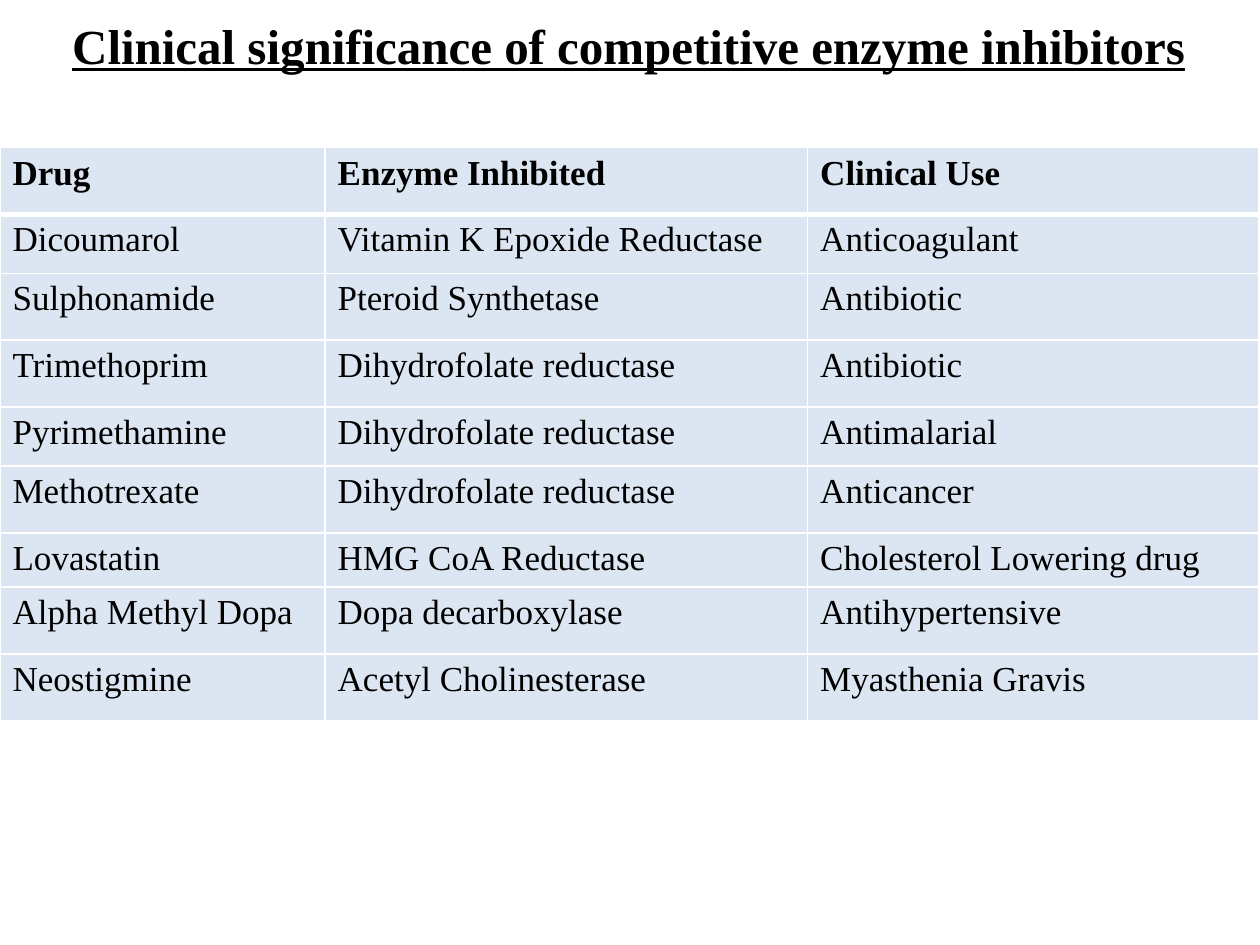
from lxml import etree
from pptx import Presentation
from pptx import util as u
from pptx.dml.color import RGBColor
from pptx.enum import text
from pptx.oxml.ns import qn

BLACK = RGBColor(0x00, 0x00, 0x00)
WHITE = RGBColor(0xFF, 0xFF, 0xFF)
PALE_BLUE = RGBColor(0xDC, 0xE6, 0xF2)

TITLE = "Clinical significance of competitive enzyme inhibitors"
DRUGS = [
    ("Drug", "Enzyme Inhibited", "Clinical Use"),
    ("Dicoumarol", "Vitamin K Epoxide Reductase", "Anticoagulant"),
    ("Sulphonamide", "Pteroid Synthetase", "Antibiotic"),
    ("Trimethoprim", "Dihydrofolate reductase", "Antibiotic"),
    ("Pyrimethamine", "Dihydrofolate reductase", "Antimalarial"),
    ("Methotrexate", "Dihydrofolate reductase", "Anticancer"),
    ("Lovastatin", "HMG CoA Reductase", "Cholesterol Lowering drug"),
    ("Alpha Methyl Dopa", "Dopa decarboxylase", "Antihypertensive"),
    ("Neostigmine", "Acetyl Cholinesterase", "Myasthenia Gravis"),
]
# Widths in grid columns, heights in grid rows
COL_WIDTHS = [25.8, 38.3, 35.8]
ROW_HEIGHTS = [5.3, 4.7, 5.3, 5.3, 4.7, 5.3, 4.3, 5.3, 5.3]


class SlideBuilder:
    """Holds the style and the current slide, on a grid of 100 x 75 units."""

    COLS, ROWS = 100, 75
    FONT = {"name": "Times New Roman"}

    def __init__(self, prs):
        self.col = prs.slide_width / self.COLS
        self.row = prs.slide_height / self.ROWS
        self.s = prs.slides.add_slide(prs.slide_layouts[5])

    def box(self, left, top, width, height):
        return (u.Emu(int(left * self.col)), u.Emu(int(top * self.row)),
                u.Emu(int(width * self.col)), u.Emu(int(height * self.row)))

    def add_words(self, tf, words, **font):
        p = tf.paragraphs[0]
        r = p.add_run()
        r.text = words
        for name, value in {**self.FONT, **font}.items():
            setattr(r.font, name, value)
        r.font.color.rgb = BLACK
        return p

    def title(self, words, *place):
        sp = self.s.shapes.title
        sp.left, sp.top, sp.width, sp.height = self.box(*place)
        tf = sp.text_frame
        tf.word_wrap = True
        tf.auto_size = text.MSO_AUTO_SIZE.NONE
        tf.vertical_anchor = text.MSO_ANCHOR.TOP
        p = self.add_words(tf, words, size=u.Pt(28), bold=True, underline=True)
        p.alignment = text.PP_ALIGN.CENTER

    def borders(self, cell, **widths):
        # Border lines come before the fill in the cell properties
        tc_pr = cell._tc.get_or_add_tcPr()
        for i, side in enumerate("LRTB"):
            ln = etree.Element(qn(f"a:ln{side}"), w=str(u.Pt(widths.get(side, 1))))
            fill = etree.SubElement(ln, qn("a:solidFill"))
            etree.SubElement(fill, qn("a:srgbClr"), val=str(WHITE))
            tc_pr.insert(i, ln)

    def table(self, rows, left, top, widths, heights):
        place = self.box(left, top, sum(widths), sum(heights))
        table = self.s.shapes.add_table(len(rows), len(widths), *place).table
        for column, width in zip(table.columns, widths):
            column.width = u.Emu(int(width * self.col))
        for row, height in zip(table.rows, heights):
            row.height = u.Emu(int(height * self.row))
        # A heavier rule separates the header from the body
        rules = {0: {"B": 3}, 1: {"T": 3}}
        for i, row in enumerate(rows):
            for j, words in enumerate(row):
                cell = table.cell(i, j)
                cell.fill.solid()
                cell.fill.fore_color.rgb = PALE_BLUE
                self.borders(cell, **rules.get(i, {}))
                self.add_words(cell.text_frame, words, size=u.Pt(20), bold=i == 0)


def main():
    prs = Presentation()
    prs.slide_width, prs.slide_height = u.Inches(10), u.Inches(7.5)
    slide = SlideBuilder(prs)

    # Title
    slide.title(TITLE, -0.2, 0.7, 100.2, 5.7)

    # Drug table
    slide.table(DRUGS, 0, 11.7, COL_WIDTHS, ROW_HEIGHTS)

    prs.save("out.pptx")


if __name__ == "__main__":
    main()
